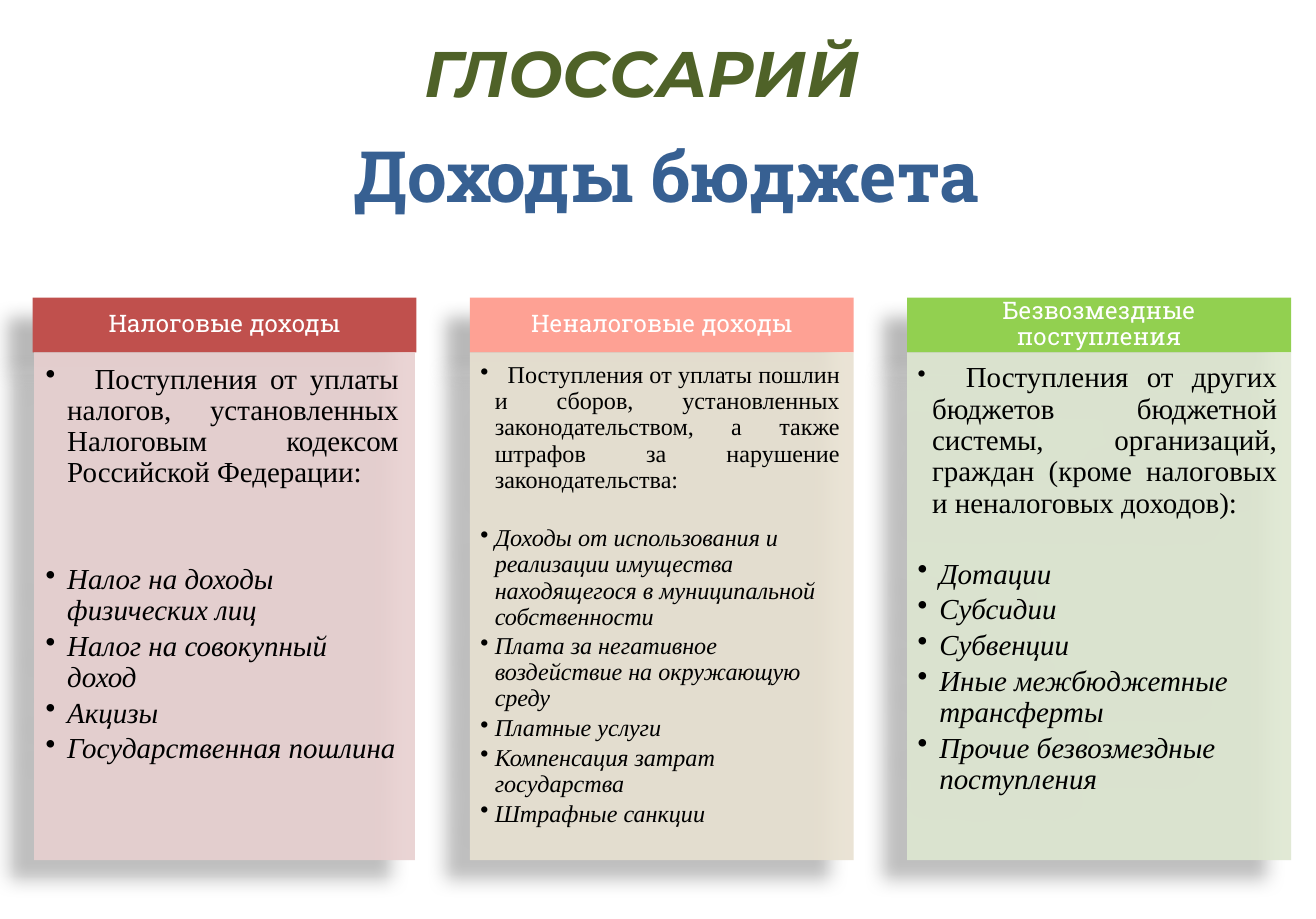
from lxml.etree import SubElement
from pptx import Presentation
from pptx.dml.color import RGBColor
from pptx.enum.shapes import MSO_SHAPE
from pptx.enum.text import MSO_ANCHOR, PP_ALIGN
from pptx.oxml.ns import qn
from pptx.util import Pt


def add_span(para, text, font, size, color, bold=False, italic=False):
    span = para.add_run()
    span.text = text
    span.font.name = font
    span.font.size = Pt(size)
    span.font.bold = bold
    span.font.italic = italic
    span.font.color.rgb = RGBColor.from_string(color)


def add_card(page, left, top, width, height, fill, insets):
    card = page.shapes.add_shape(MSO_SHAPE.RECTANGLE, Pt(left), Pt(top), Pt(width), Pt(height))
    card.fill.solid()
    card.fill.fore_color.rgb = RGBColor.from_string(fill)
    card.line.fill.background()
    card.shadow.inherit = False
    effects = card.element.spPr.find(qn("a:effectLst"))
    shadow = SubElement(effects, qn("a:outerShdw"), blurRad=str(Pt(11.8)), dist=str(Pt(19.7)),
                        dir=str(141 * 60000), algn="tr", rotWithShape="0")
    black = SubElement(shadow, qn("a:srgbClr"), val="000000")
    SubElement(black, qn("a:alpha"), val="28000")
    frame = card.text_frame
    frame.word_wrap = True
    frame.margin_left, frame.margin_top, frame.margin_right, frame.margin_bottom = map(Pt, insets)
    return card


deck = Presentation()
deck.slide_width = Pt(817.9)
deck.slide_height = Pt(571)
page = deck.slides.add_slide(deck.slide_layouts[5])

title = page.shapes.title
title.left, title.top, title.width, title.height = Pt(9.4), Pt(5.8), Pt(779), Pt(75.6)
title.text_frame.vertical_anchor = MSO_ANCHOR.MIDDLE
para = title.text_frame.paragraphs[0]
para.alignment = PP_ALIGN.CENTER
para.line_spacing = Pt(49.4)
add_span(para, "ГЛОССАРИЙ", "Montserrat", 40, "4F6228", bold=True, italic=True)

subtitle = page.shapes.add_textbox(Pt(10), Pt(78.5), Pt(808), Pt(62.6))
subtitle.text_frame.word_wrap = True
para = subtitle.text_frame.paragraphs[0]
para.alignment = PP_ALIGN.CENTER
add_span(para, "Доходы бюджета", "Roboto Slab", 44, "376092", bold=True)

columns = [
    {"heading": "Налоговые доходы", "head_fill": "C0504D", "body_fill": "E8D0D0",
     "size": 18, "lead_size": 18, "lead_hang": 13.5, "hang": 13.5, "lead_tab": 17, "gap": 44,
     "trim": 1, "insets": (7.2, 7.2, 10, 11.5),
     "lead": "Поступления от уплаты налогов, установленных Налоговым кодексом Российской Федерации:",
     "items": ["Налог на доходы физических лиц", "Налог на совокупный доход", "Акцизы",
               "Государственная пошлина"]},
    {"heading": "Неналоговые доходы", "head_fill": "FEA194", "body_fill": "E8E1D1",
     "size": 15, "lead_size": 15, "lead_hang": 9, "hang": 9, "lead_tab": 8, "gap": 18,
     "trim": 0, "insets": (6.5, 6.5, 8.6, 9.4),
     "lead": "Поступления от уплаты пошлин и сборов, установленных законодательством, "
             "а также штрафов за нарушение законодательства:",
     "items": ["Доходы от использования и реализации имущества находящегося "
               "в муниципальной собственности",
               "Плата за негативное воздействие на окружающую среду", "Платные услуги",
               "Компенсация затрат государства", "Штрафные санкции"]},
    {"heading": "Безвозмездные поступления", "head_fill": "92D050", "body_fill": "DEE7D1",
     "size": 18, "lead_size": 15, "lead_hang": 9, "hang": 13.5, "lead_tab": 21, "gap": 22,
     "trim": 0, "insets": (6.5, 6.5, 8.6, 9.4),
     "lead": "Поступления от других бюджетов бюджетной системы, организаций, "
             "граждан (кроме налоговых и неналоговых доходов):",
     "items": ["Дотации", "Субсидии", "Субвенции", "Иные межбюджетные трансферты",
               "Прочие безвозмездные поступления"]},
]

for index, column in enumerate(columns):
    left = 20.2 + 271.8 * index
    header = add_card(page, left, 185, 238.6, 34, column["head_fill"], (8.6, 5, 8.6, 5))
    header.text_frame.vertical_anchor = MSO_ANCHOR.MIDDLE
    para = header.text_frame.paragraphs[0]
    para.alignment = PP_ALIGN.CENTER
    para.line_spacing = 0.9
    add_span(para, column["heading"], "Roboto Slab", 15, "FFFFFF")

    trim = column["trim"]
    panel = add_card(page, left + trim, 219, 238.6 - 2 * trim, 315.4, column["body_fill"],
                     column["insets"])
    tint = panel.element.spPr.find(qn("a:solidFill")).find(qn("a:srgbClr"))
    SubElement(tint, qn("a:alpha"), val="90000")
    frame = panel.text_frame
    frame.vertical_anchor = MSO_ANCHOR.TOP

    size = column["size"]
    for row, text in enumerate([column["lead"]] + column["items"]):
        is_lead = row == 0
        para = frame.paragraphs[0] if is_lead else frame.add_paragraph()
        hang = column["lead_hang"] if is_lead else column["hang"]
        props = para._p.get_or_add_pPr()
        props.set("marL", str(Pt(hang)))
        props.set("indent", str(-Pt(hang)))
        SubElement(props, qn("a:buChar"), char="•")
        if is_lead:
            tabs = SubElement(props, qn("a:tabLst"))
            SubElement(tabs, qn("a:tab"), pos=str(Pt(hang + column["lead_tab"])), algn="l")
            add_span(para, "\t", "Times New Roman", column["lead_size"], "000000")
        para.alignment = PP_ALIGN.JUSTIFY if is_lead else PP_ALIGN.LEFT
        para.line_spacing = 0.9
        para.space_after = Pt(size * 0.15)
        if row == 1:
            para.space_before = Pt(column["gap"])
        add_span(para, text, "Times New Roman", size, "000000", italic=not is_lead)

deck.save("out.pptx")
